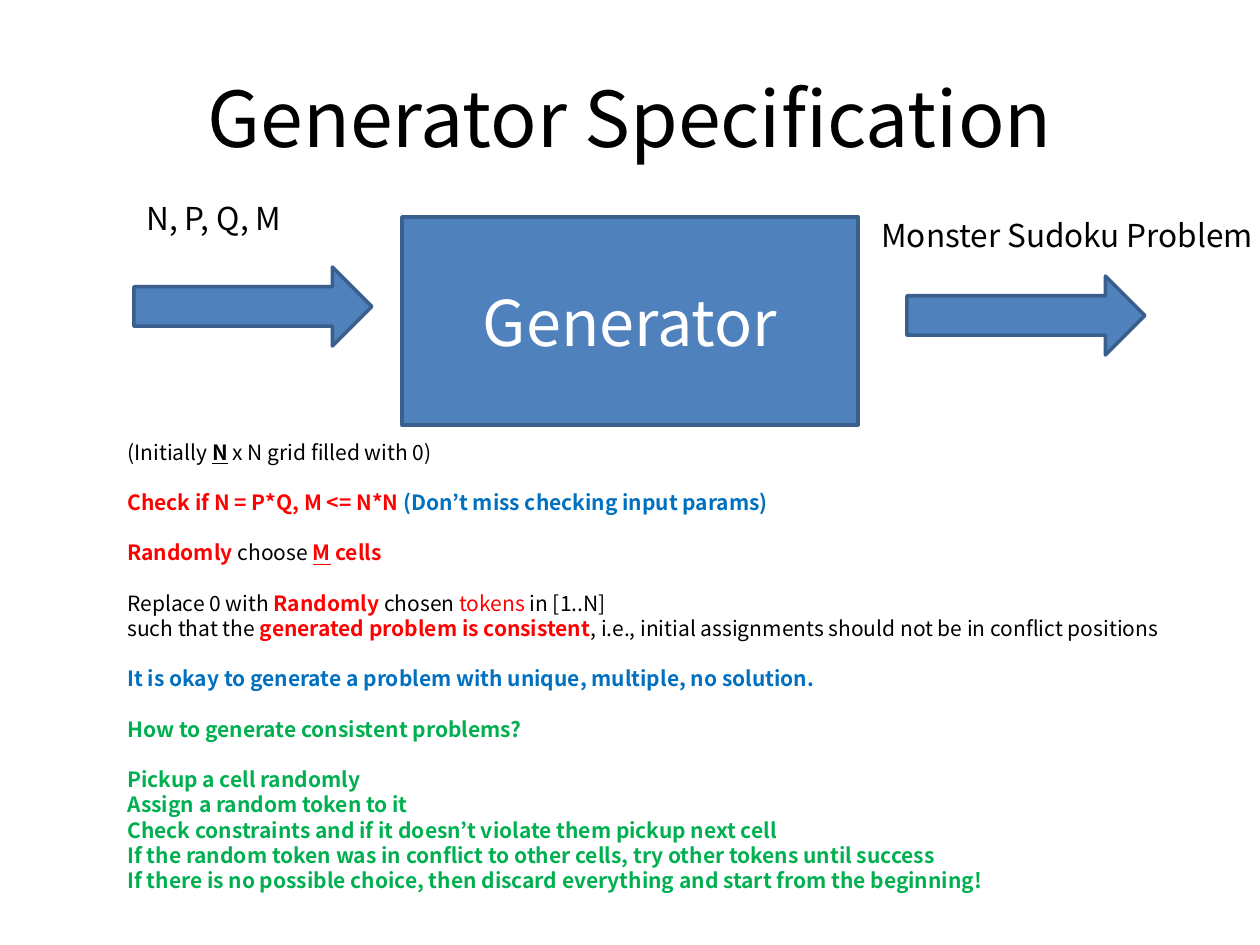
from pptx import Presentation
from pptx.dml.color import RGBColor
from pptx.enum.shapes import MSO_SHAPE as Shape
from pptx.enum.text import MSO_ANCHOR as Anchor, PP_ALIGN as Align
from pptx.util import Pt

PIXEL = 914400 // 126
FONT = "Noto Sans CJK KR"
COLORS = {"black": "000000", "white": "FFFFFF", "red": "FF0000", "blue": "0070C0",
          "green": "00B050", "fill": "4F81BD", "line": "3A5F8C"}

TITLE = ("Generator Specification", (63, 38, 1134, 157))
GENERATOR = ("Generator", (402, 217, 456, 208))
ARROWS = [(134, 267, 238, 79), (907, 276, 238, 79)]
LABELS = [("N, P, Q, M", (134, 197, 238, 127)),
          ("Monster Sudoku Problem", (869, 214, 397, 127))]

# Each block is a list of lines; each line is a list of (text, color, style) runs.
BODY_BOX = (115, 433, 1091, 547)
BODY_SIZE, BODY_PITCH = 12, 14.4
BLOCKS = [
    [[("(Initially ", "black", ""), ("N", "black", "bu"),
      (" x N grid filled with 0)", "black", "")]],
    [[("Check if N = P*Q, M <= N*N ", "red", "b"),
      ("(Don’t miss checking input params)", "blue", "b")]],
    [[("Randomly", "red", "b"), (" choose ", "black", ""), ("M", "red", "bu"),
      (" cells", "red", "b")]],
    [[("Replace 0 with ", "black", ""), ("Randomly", "red", "b"),
      (" chosen ", "black", ""), ("tokens", "red", ""), (" in [1..N]", "black", "")],
     [("such that the ", "black", ""), ("generated problem is consistent", "red", "b"),
      (", i.e., initial assignments should not be in conflict positions", "black", "")]],
    [[("It is okay to generate a problem with unique, multiple, no solution.", "blue", "b")]],
    [[("How to generate consistent problems?", "green", "b")]],
    [[(step, "green", "b")] for step in (
        "Pickup a cell randomly",
        "Assign a random token to it",
        "Check constraints and if it doesn’t violate them pickup next cell",
        "If the random token was in conflict to other cells, try other tokens until success",
        "If there is no possible choice, then discard everything and start from the beginning!")],
]


def rgb(name):
    """Return the named color."""
    return RGBColor.from_string(COLORS[name])


def emu(box):
    """Turn a pixel box into EMU lengths."""
    return [length * PIXEL for length in box]


def write(shape, text, size, color, align):
    """Put one line of text into a shape."""
    shape.text_frame.text = text
    paragraph = shape.text_frame.paragraphs[0]
    paragraph.alignment = align
    paragraph.font.name, paragraph.font.size = FONT, Pt(size)
    paragraph.font.color.rgb = rgb(color)
    return paragraph


def add_block(slide, kind, box):
    """Add a filled and outlined preset shape."""
    shape = slide.shapes.add_shape(kind, *emu(box))
    shape.shadow.inherit = False
    shape.fill.solid()
    shape.fill.fore_color.rgb = rgb("fill")
    shape.line.color.rgb = rgb("line")
    shape.line.width = Pt(2)
    return shape


def add_body(slide):
    """Add the specification text, one blank line's gap between blocks."""
    frame = slide.shapes.add_textbox(*emu(BODY_BOX)).text_frame
    frame.word_wrap = True
    paragraph = frame.paragraphs[0]
    for block_number, block in enumerate(BLOCKS):
        for line_number, line in enumerate(block):
            if block_number or line_number:
                paragraph = frame.add_paragraph()
            paragraph.line_spacing = Pt(BODY_PITCH)
            if block_number and not line_number:
                paragraph.space_before = Pt(BODY_PITCH)
            paragraph.font.name, paragraph.font.size = FONT, Pt(BODY_SIZE)
            for text, color, style in line:
                run = paragraph.add_run()
                run.text = text
                run.font.color.rgb = rgb(color)
                run.font.bold = "b" in style
                run.font.underline = "u" in style


presentation = Presentation()
presentation.slide_width, presentation.slide_height = emu((1260, 945))
slide = presentation.slides.add_slide(presentation.slide_layouts[5])

title = slide.shapes.title
title.left, title.top, title.width, title.height = emu(TITLE[1])
title.text_frame.vertical_anchor = Anchor.MIDDLE
write(title, TITLE[0], 44, "black", Align.CENTER)

generator = add_block(slide, Shape.RECTANGLE, GENERATOR[1])
generator.text_frame.vertical_anchor = Anchor.MIDDLE
write(generator, GENERATOR[0], 36, "white", Align.CENTER)

for box in ARROWS:
    add_block(slide, Shape.RIGHT_ARROW, box)

for text, box in LABELS:
    label = slide.shapes.add_textbox(*emu(box))
    label.text_frame.word_wrap = True
    write(label, text, 18, "black", Align.LEFT).line_spacing = 0.9

add_body(slide)
presentation.save("out.pptx")
